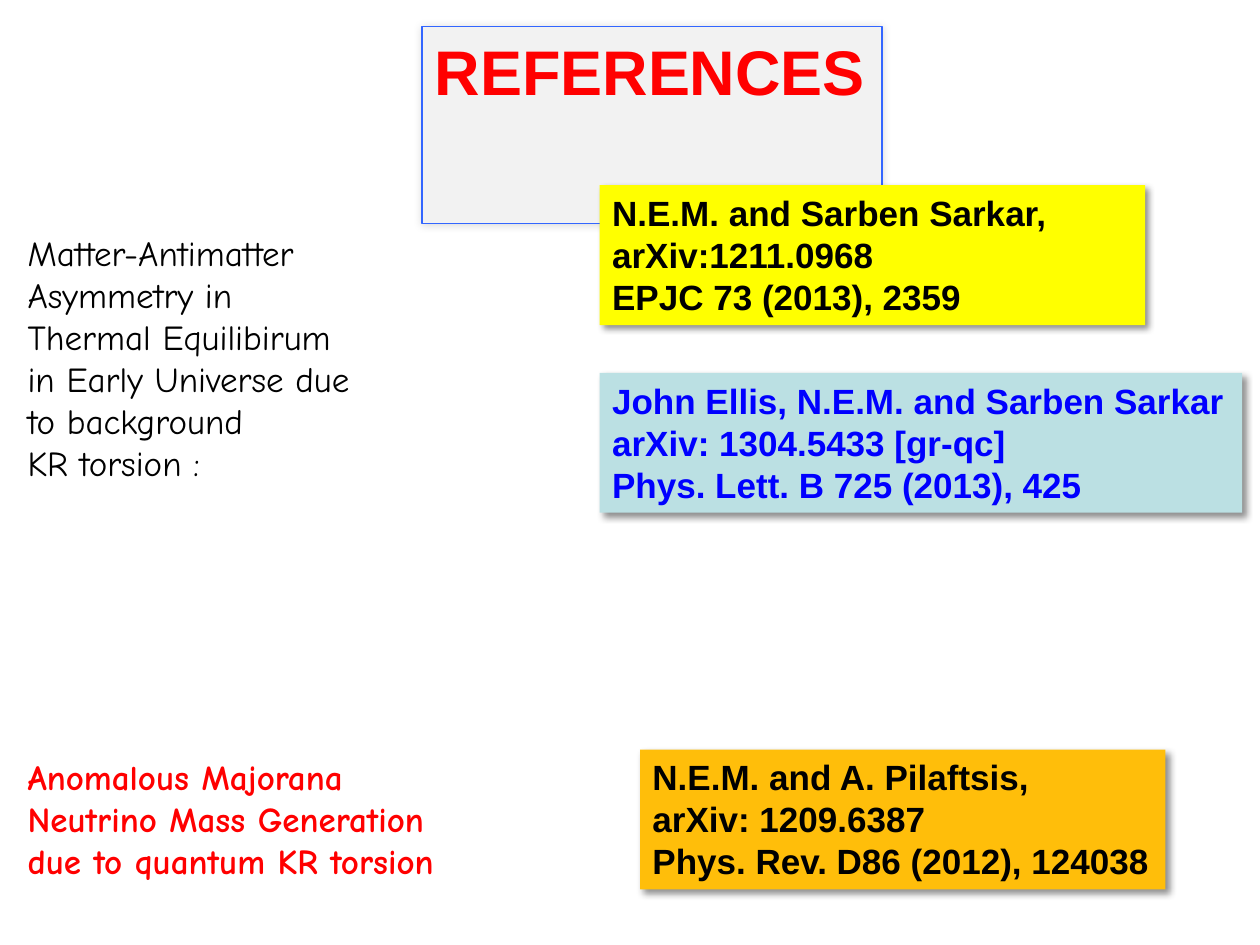
from dataclasses import dataclass
from typing import Any

import pptx
import pptx.dml.color
import pptx.enum.shapes
import pptx.enum.text
import pptx.oxml
import pptx.oxml.ns
import pptx.util

Inches = pptx.util.Inches
Pt = pptx.util.Pt
RGB = pptx.dml.color.RGBColor.from_string


@dataclass(frozen=True)
class Theme:
    heading_font: str = "Arial"
    topic_font: str = "Comic Neue"
    heading_size: int = 36
    text_size: int = 20
    black: str = "000000"
    red: str = "FF0000"
    blue: str = "0000FF"
    heading_fill: str = "F2F2F2"
    heading_line: str = "3366FF"
    yellow: str = "FFFF00"
    pale_teal: str = "BBE0E3"
    amber: str = "FFBE0A"


@dataclass(frozen=True)
class Box:
    left: float
    top: float
    width: float
    height: float


@dataclass(frozen=True)
class Shadow:
    """Opacity in percent, blur and distance in points, direction in degrees."""
    opacity: int
    blur: float
    distance: float
    direction: int


@dataclass(frozen=True)
class Citation:
    box: Box
    fill: str
    color: str
    lines: tuple[str, ...]


@dataclass(frozen=True)
class Topic:
    box: Box
    color: str
    bold: bool
    lines: tuple[str, ...]


THEME = Theme()
HEADING_SHADOW = Shadow(15, 5, 0, 225)
CITATION_SHADOW = Shadow(43, 4, 3, 45)
CITATION_HEIGHT = 1.11
MAJORANA_TOP = 5.95

CITATIONS = (
    Citation(Box(4.76, 1.47, 4.33, CITATION_HEIGHT), THEME.yellow, THEME.black,
             ("N.E.M. and Sarben Sarkar,", "arXiv:1211.0968", "EPJC 73 (2013), 2359")),
    Citation(Box(4.76, 2.96, 5.1, CITATION_HEIGHT), THEME.pale_teal, THEME.blue,
             ("John Ellis, N.E.M. and Sarben Sarkar", "arXiv: 1304.5433 [gr-qc]",
              "Phys. Lett. B 725 (2013), 425")),
    Citation(Box(5.08, MAJORANA_TOP, 4.17, CITATION_HEIGHT), THEME.amber, THEME.black,
             ("N.E.M. and A. Pilaftsis,", "arXiv: 1209.6387",
              "Phys. Rev. D86 (2012), 124038")),
)
TOPICS = (
    Topic(Box(0.12, 1.79, 3.69, 2.12), THEME.black, False,
          ("Matter-Antimatter", "Asymmetry in", "Thermal Equilibirum",
           "in Early Universe due", "to background", "KR torsion :")),
    Topic(Box(0.12, MAJORANA_TOP, 4.58, CITATION_HEIGHT), THEME.red, True,
          ("Anomalous Majorana", "Neutrino Mass Generation",
           "due to quantum KR torsion")),
)


def lengths(box: Box) -> tuple[int, ...]:
    return tuple(Inches(n) for n in (box.left, box.top, box.width, box.height))


def apply_format(target: Any, values: dict[str, Any]) -> None:
    for name, value in values.items():
        setattr(target, name, value)


def write_lines(shape: Any, lines: tuple[str, ...], color: str, font: dict[str, Any],
                align: Any = pptx.enum.text.PP_ALIGN.LEFT) -> None:
    frame = shape.text_frame
    frame.text = "\n".join(lines)
    apply_format(frame, {
        "word_wrap": True,
        "auto_size": pptx.enum.text.MSO_AUTO_SIZE.SHAPE_TO_FIT_TEXT,
        "vertical_anchor": pptx.enum.text.MSO_ANCHOR.TOP,
    })
    for paragraph in frame.paragraphs:
        paragraph.alignment = align
        for run in paragraph.runs:
            apply_format(run.font, font)
            run.font.color.rgb = RGB(color)


def fill_shape(shape: Any, color: str) -> None:
    shape.fill.solid()
    shape.fill.fore_color.rgb = RGB(color)


def cast_shadow(shape: Any, shadow: Shadow) -> None:
    properties = shape._element.spPr
    effects = pptx.oxml.parse_xml(
        f'<a:effectLst {pptx.oxml.ns.nsdecls("a")}>'
        f'<a:outerShdw blurRad="{Pt(shadow.blur)}" dist="{Pt(shadow.distance)}" '
        f'dir="{shadow.direction * 60000}" algn="tl" rotWithShape="0">'
        f'<a:srgbClr val="{THEME.black}"><a:alpha val="{shadow.opacity * 1000}"/></a:srgbClr>'
        '</a:outerShdw></a:effectLst>')
    properties.append(effects)


def draw_heading(slide: Any) -> None:
    heading = slide.shapes.title
    box = lengths(Box(3.35, 0.21, 3.65, 0.71))
    apply_format(heading, dict(zip(("left", "top", "width", "height"), box)))
    fill_shape(heading, THEME.heading_fill)
    heading.line.color.rgb = RGB(THEME.heading_line)
    heading.line.width = Pt(0.75)
    cast_shadow(heading, HEADING_SHADOW)
    write_lines(heading, ("REFERENCES",), THEME.red,
                {"name": THEME.heading_font, "size": Pt(THEME.heading_size), "bold": True})


def draw_citation(slide: Any, citation: Citation) -> None:
    card = slide.shapes.add_shape(pptx.enum.shapes.MSO_SHAPE.RECTANGLE,
                                  *lengths(citation.box))
    fill_shape(card, citation.fill)
    card.line.fill.background()
    cast_shadow(card, CITATION_SHADOW)
    write_lines(card, citation.lines, citation.color,
                {"name": THEME.heading_font, "size": Pt(THEME.text_size), "bold": True})


def draw_topic(slide: Any, topic: Topic) -> None:
    label = slide.shapes.add_textbox(*lengths(topic.box))
    write_lines(label, topic.lines, topic.color,
                {"name": THEME.topic_font, "size": Pt(THEME.text_size), "bold": topic.bold})


def main() -> None:
    deck = pptx.Presentation()
    apply_format(deck, {"slide_width": Inches(10), "slide_height": Inches(7.5)})
    slide = deck.slides.add_slide(deck.slide_layouts.get_by_name("Title Only"))
    draw_heading(slide)
    for citation in CITATIONS:
        draw_citation(slide, citation)
    for topic in TOPICS:
        draw_topic(slide, topic)
    deck.save("out.pptx")


if __name__ == "__main__":
    main()
